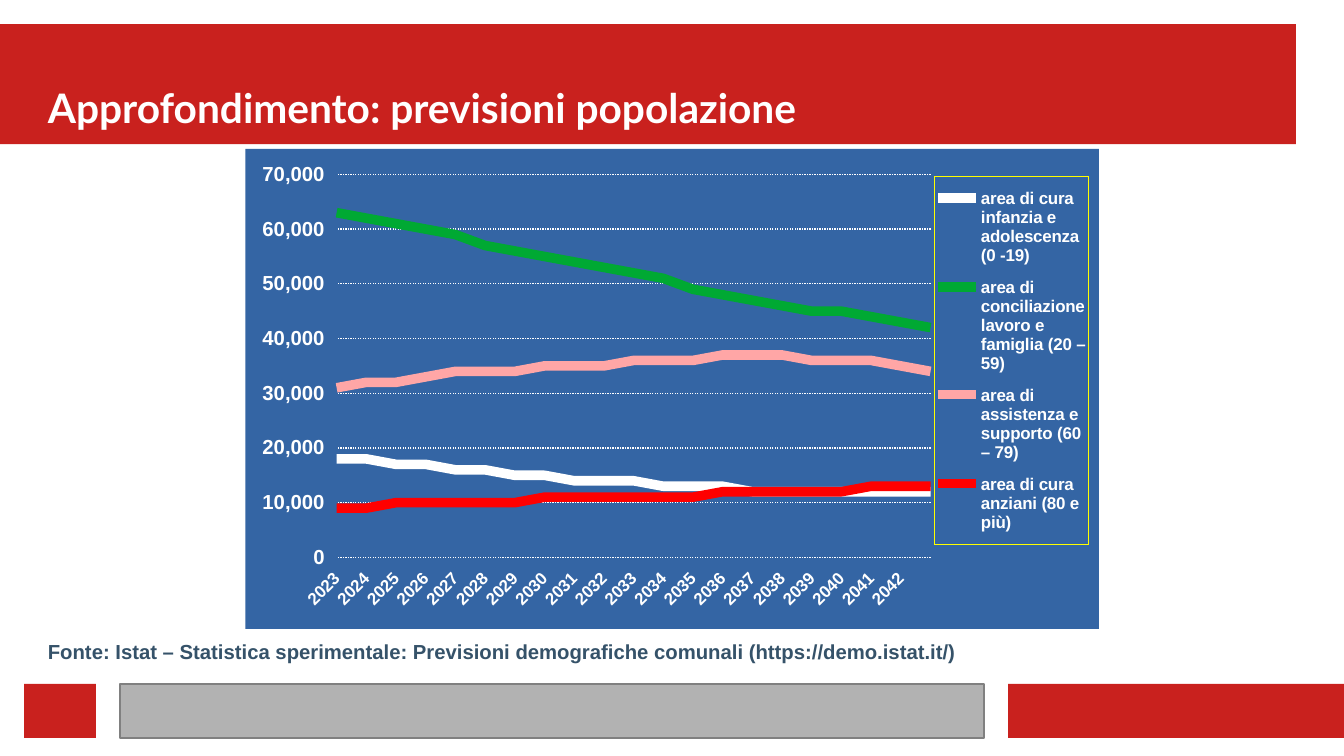
import pptx
import pptx.chart.data
import pptx.dml.color
import pptx.enum.chart
import pptx.enum.dml
import pptx.enum.shapes
import pptx.enum.text
import pptx.oxml
import pptx.oxml.ns
import pptx.util

Pt = pptx.util.Pt
COLOURS = {
    "red": "C9211E", "grey": "B2B2B2", "edge": "808080", "white": "FFFFFF",
    "slate": "355269", "blue": "3465A4", "yellow": "FFFF00",
    "green": "00A933", "pink": "FFA6A6", "bright red": "FF0000",
}


def colour(name):
    return pptx.dml.color.RGBColor.from_string(COLOURS[name])


def write(box, text, *, size, font, ink, anchor, after=0):
    """Fill a box with one bold, left-aligned paragraph and no margins."""
    frame = box.text_frame
    frame.word_wrap = True
    frame.auto_size = pptx.enum.text.MSO_AUTO_SIZE.NONE
    frame.margin_left = frame.margin_right = frame.margin_top = frame.margin_bottom = 0
    frame.vertical_anchor = anchor
    para = frame.paragraphs[0]
    para.alignment = pptx.enum.text.PP_ALIGN.LEFT
    para.space_before, para.space_after = Pt(0), Pt(after)
    span = para.add_run()
    span.text = text
    span.font.size, span.font.name, span.font.bold = Pt(size), font, True
    span.font.color.rgb = colour(ink)


deck = pptx.Presentation()
deck.slide_width, deck.slide_height = Pt(793.7), Pt(446.46)
page = deck.slides.add_slide(deck.slide_layouts[5])

# Header band and footer bars
FOOTER_TOP, FOOTER_HEIGHT = 403.9, 31.9
bars = [
    (0, 14.2, 765.4, 70.9, "red"),
    (595.3, FOOTER_TOP, 198.4, FOOTER_HEIGHT, "red"),
    (70.9, FOOTER_TOP, 510.2, FOOTER_HEIGHT, "grey"),
    (14.2, FOOTER_TOP, 42.5, FOOTER_HEIGHT, "red"),
]
for left, top, width, height, fill in bars:
    bar = page.shapes.add_shape(
        pptx.enum.shapes.MSO_SHAPE.RECTANGLE, Pt(left), Pt(top), Pt(width), Pt(height))
    bar.shadow.inherit = False
    bar.fill.solid()
    bar.fill.fore_color.rgb = colour(fill)
    if fill == "grey":
        bar.line.color.rgb = colour("edge")
        bar.line.width = Pt(0)
    else:
        bar.line.fill.background()

title = page.shapes.title
title.left, title.top, title.width, title.height = Pt(28.3), Pt(21.3), Pt(737), Pt(56.7)
write(title, "Approfondimento: previsioni popolazione", size=24, font="Lato",
      ink="white", anchor=pptx.enum.text.MSO_ANCHOR.BOTTOM)
title.element.getparent().append(title.element)  # in front of the header band

# Population forecast, in thousands of people
forecasts = [
    ("area di cura infanzia e adolescenza (0 -19)", "white",
     [18, 18, 17, 17, 16, 16, 15, 15, 14, 14, 14, 13, 13, 13, 12, 12, 12, 12, 12, 12, 12]),
    ("area di conciliazione lavoro e famiglia (20 – 59)", "green",
     [63, 62, 61, 60, 59, 57, 56, 55, 54, 53, 52, 51, 49, 48, 47, 46, 45, 45, 44, 43, 42]),
    ("area di assistenza e supporto (60 – 79)", "pink",
     [31, 32, 32, 33, 34, 34, 34, 35, 35, 35, 36, 36, 36, 37, 37, 37, 36, 36, 36, 35, 34]),
    ("area di cura anziani (80 e più)", "bright red",
     [9, 9, 10, 10, 10, 10, 10, 11, 11, 11, 11, 11, 11, 12, 12, 12, 12, 12, 13, 13, 13]),
]
data = pptx.chart.data.CategoryChartData(number_format="#,##0")
data.categories = [str(year) for year in range(2023, 2043)] + [""]
for name, ink, thousands in forecasts:
    data.add_series(name, [value * 1000 for value in thousands])
chart = page.shapes.add_chart(
    pptx.enum.chart.XL_CHART_TYPE.LINE, Pt(144.9), Pt(88), Pt(504), Pt(283.5), data).chart
chart.has_title = False
chart.font.name, chart.font.size = "Arial", Pt(10)
chart.plots[0].vary_by_categories = False

for series, (name, ink, thousands) in zip(chart.plots[0].series, forecasts):
    series.smooth = False
    series.format.line.color.rgb = colour(ink)
    series.format.line.width = Pt(5.67)

years, people = chart.category_axis, chart.value_axis
chart.has_legend = True
legend = chart.legend
legend.position = pptx.enum.chart.XL_LEGEND_POSITION.RIGHT
legend.include_in_layout = False
for font, size in [(years.tick_labels.font, 10), (people.tick_labels.font, 12), (legend.font, 10)]:
    font.name, font.size, font.bold = "Arial", Pt(size), True
    font.color.rgb = colour("white")
for axis in (years, people):
    axis.format.line.fill.background()
people.minimum_scale, people.maximum_scale, people.major_unit = 0, 70000, 10000
people.tick_labels.number_format = "#,##0"
people.tick_labels.number_format_is_linked = False
people.has_major_gridlines = True
grid = people.major_gridlines.format.line
grid.color.rgb = colour("white")
grid.width = Pt(0)
grid.dash_style = pptx.enum.dml.MSO_LINE.ROUND_DOT

# Label slant, first point on the axis, chart background and manual layout
NAMES = pptx.oxml.ns.nsdecls("c", "a")
SOLID = '<a:solidFill><a:srgbClr val="%s"/></a:solidFill>'
space = chart.element
space.xpath("c:chart/c:plotArea/c:catAx/c:txPr/a:bodyPr")[0].set("rot", "-2700000")
for old in space.xpath("c:chart/c:plotArea/c:layout | c:chart/c:legend/c:layout"
                       " | c:chart/c:plotArea/c:valAx/c:crossBetween"):
    old.getparent().remove(old)
crossing = pptx.oxml.parse_xml(f'<c:crossBetween {NAMES} val="midCat"/>')
space.xpath("c:chart/c:plotArea/c:valAx/*[self::c:crossAx or self::c:crosses]")[-1].addnext(crossing)
background = pptx.oxml.parse_xml(
    f'<c:spPr {NAMES}>{SOLID % COLOURS["blue"]}<a:ln><a:noFill/></a:ln></c:spPr>')
space.xpath("c:chart")[0].addnext(background)
frame = pptx.oxml.parse_xml(
    f'<c:spPr {NAMES}><a:noFill/><a:ln w="0">{SOLID % COLOURS["yellow"]}</a:ln></c:spPr>')
space.xpath("c:chart/c:legend/c:txPr")[0].addprevious(frame)

layouts = []
for target, places in [('<c:layoutTarget val="inner"/>', (0.107, 0.053, 0.696, 0.798)),
                       ("", (0.808, 0.058, 0.18, 0.767))]:
    modes = '<c:xMode val="edge"/><c:yMode val="edge"/>'
    sizes = "".join(f'<c:{key} val="{place}"/>' for key, place in zip("xywh", places))
    layouts.append(pptx.oxml.parse_xml(
        f"<c:layout {NAMES}><c:manualLayout>{target}{modes}{sizes}</c:manualLayout></c:layout>"))
space.xpath("c:chart/c:plotArea")[0].insert(0, layouts[0])
space.xpath("c:chart/c:legend/c:legendPos")[0].addnext(layouts[1])

source = page.shapes.add_textbox(Pt(28.3), Pt(377.3), Pt(722.9), Pt(22.3))
write(source, "Fonte: Istat – Statistica sperimentale: Previsioni demografiche comunali "
      "(https://demo.istat.it/)", size=12, font="Arial", ink="slate",
      anchor=pptx.enum.text.MSO_ANCHOR.TOP, after=8.5)

deck.save("out.pptx")
